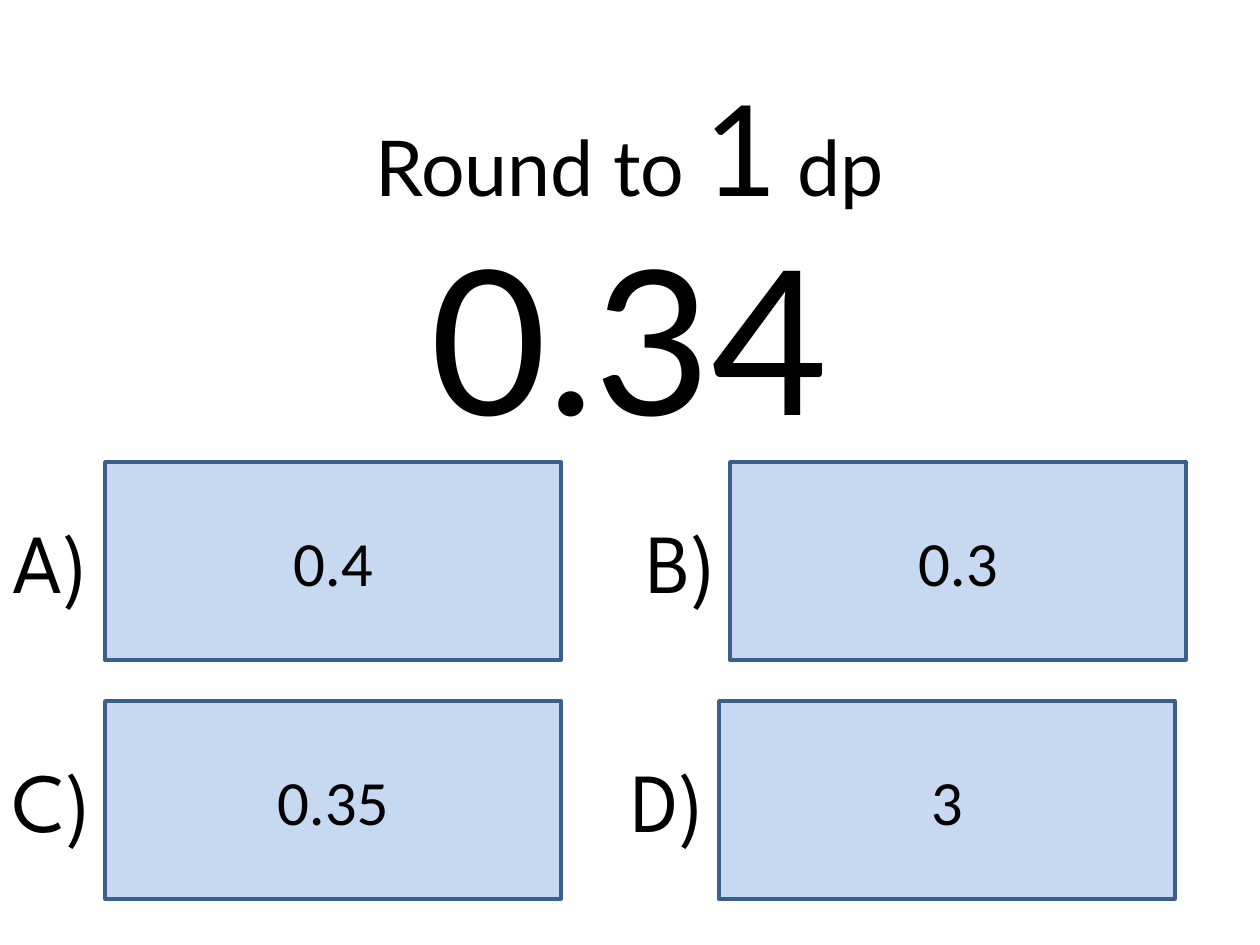
import dataclasses

import pptx
import pptx.dml.color
import pptx.enum.shapes
import pptx.enum.text
import pptx.util

PIXELS_PER_INCH = 126


@dataclasses.dataclass(frozen=True)
class Theme:
    """Colours, fonts and type sizes of the quiz slide."""
    text: str = "000000"
    card_fill: str = "C6D9F1"
    card_line: str = "3A5F8C"
    line_width: int = 2
    answer_font: str = "Calibri"
    label_font: str = "League Spartan"
    question_font: str = "Lato"
    answer_size: int = 36
    label_size: int = 48
    prompt_size: int = 44
    digit_size: int = 72
    number_size: int = 115


THEME = Theme()


def px(length):
    """Turn pixels into EMU."""
    return pptx.util.Emu(round(length * 914400 / PIXELS_PER_INCH))


def rgb(value):
    """Turn a hex string into a colour."""
    return pptx.dml.color.RGBColor.from_string(value)


def apply_format(target, values):
    """Set each attribute of target from a dict of values."""
    for name, value in values.items():
        setattr(target, name, value)


def write_text(shape, runs, font_name, alignment, frame_format):
    """Write one paragraph of (text, size) runs into a shape."""
    apply_format(shape.text_frame, frame_format)
    paragraph = shape.text_frame.paragraphs[0]
    paragraph.alignment = alignment
    for text, size in runs:
        run = paragraph.add_run()
        run.text = text
        apply_format(run.font, {"name": font_name, "size": pptx.util.Pt(size)})
        run.font.color.rgb = rgb(THEME.text)


def add_question_line(slide, box, runs):
    """Place a centred line of the question in the box."""
    shape = slide.shapes.add_textbox(*map(px, box))
    write_text(shape, runs, THEME.question_font, pptx.enum.text.PP_ALIGN.CENTER, {
        "word_wrap": True,
        "vertical_anchor": pptx.enum.text.MSO_ANCHOR.MIDDLE,
    })


def add_question(slide, box, prompt, number):
    """Stack the prompt above the number to round."""
    left, top, width, height = box
    line_height, line_step = 203, height - 203
    for index, runs in enumerate((prompt, number)):
        line_box = (left, top + index * line_step, width, line_height)
        add_question_line(slide, line_box, runs)


def add_answer(slide, box, letter, answer, label_offset, label_width):
    """Place an answer card in the box with its letter to the left."""
    left, top, width, height = box
    card = slide.shapes.add_shape(
        pptx.enum.shapes.MSO_SHAPE.RECTANGLE, *map(px, box))
    card.shadow.inherit = False
    card.fill.solid()
    card.fill.fore_color.rgb = rgb(THEME.card_fill)
    card.line.color.rgb = rgb(THEME.card_line)
    card.line.width = pptx.util.Pt(THEME.line_width)
    write_text(card, [(answer, THEME.answer_size)], THEME.answer_font,
               pptx.enum.text.PP_ALIGN.CENTER,
               {"vertical_anchor": pptx.enum.text.MSO_ANCHOR.MIDDLE})

    label_box = (left - label_offset, top + 41, label_width, 115)
    label = slide.shapes.add_textbox(*map(px, label_box))
    write_text(label, [(f"{letter})", THEME.label_size)], THEME.label_font,
               pptx.enum.text.PP_ALIGN.LEFT, {
                   "word_wrap": False,
                   "auto_size": pptx.enum.text.MSO_AUTO_SIZE.SHAPE_TO_FIT_TEXT,
               })


def add_quiz_slide(presentation):
    """Add the rounding question and its four answers."""
    slide = presentation.slides.add_slide(presentation.slide_layouts[6])
    prompt = [("Round to ", THEME.prompt_size), ("1", THEME.digit_size),
              (" dp", THEME.prompt_size)]
    add_question(slide, (94, 45, 1071, 392), prompt,
                 [("0.34", THEME.number_size)])
    upper, lower = 462, 701
    answers = [
        ("A", "0.4", 105, upper, 105, 120),
        ("B", "0.3", 730, upper, 96, 106),
        ("C", "0.35", 105, lower, 105, 126),
        ("D", "3", 719, lower, 100, 120),
    ]
    for letter, answer, left, top, label_offset, label_width in answers:
        add_answer(slide, (left, top, 456, 198), letter, answer,
                   label_offset, label_width)


def main():
    """Build and save the presentation."""
    presentation = pptx.Presentation()
    apply_format(presentation, {"slide_width": px(1260), "slide_height": px(945)})
    add_quiz_slide(presentation)
    presentation.save("out.pptx")


if __name__ == "__main__":
    main()
